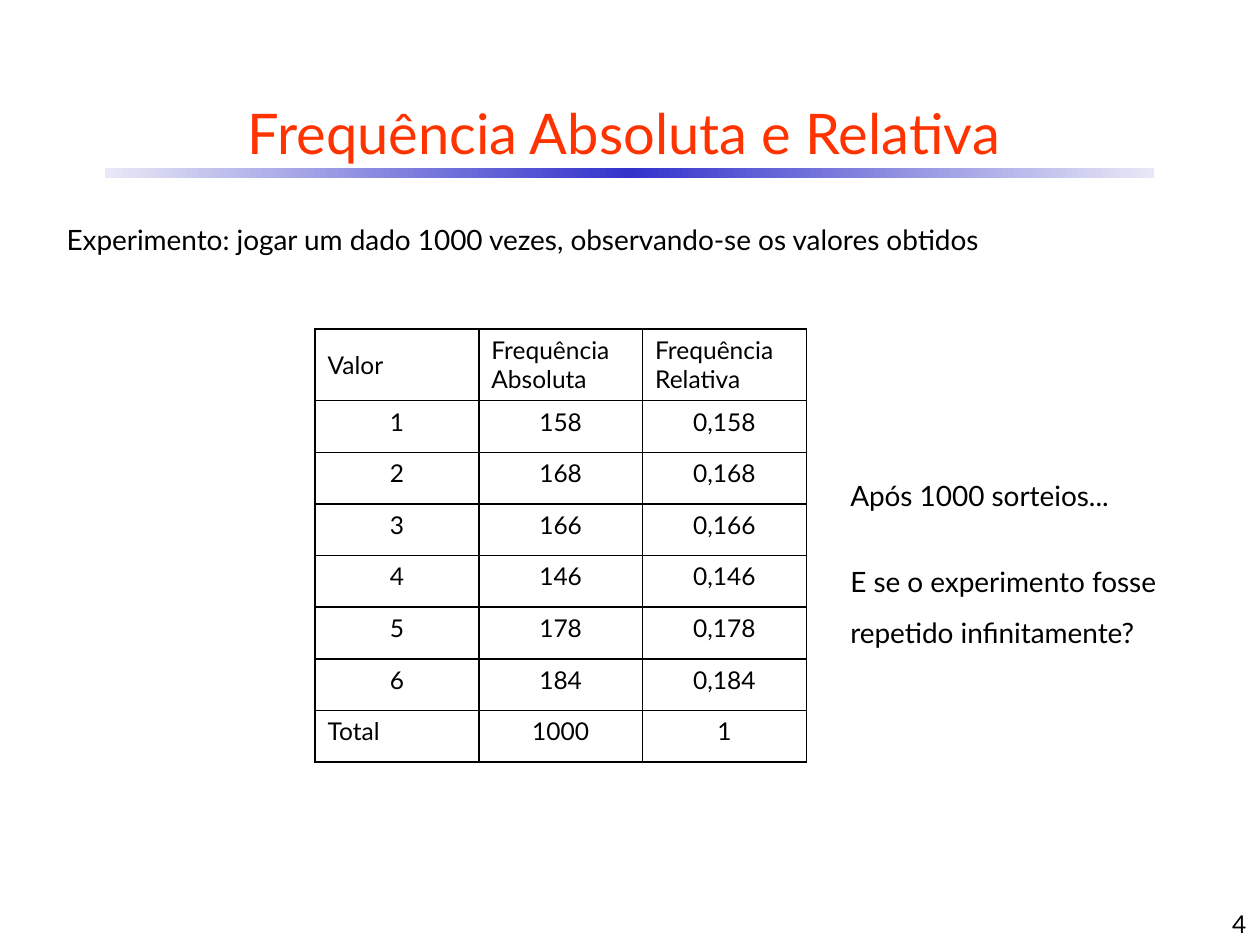
from copy import deepcopy
from pptx import Presentation
from pptx.util import Inches, Pt
from pptx.dml.color import RGBColor as RGB
from pptx.enum.shapes import MSO_SHAPE as Shape
from pptx.enum.text import MSO_ANCHOR as Anchor, MSO_AUTO_SIZE as Auto, PP_ALIGN as Align
from pptx.oxml import parse_xml
from pptx.oxml.ns import nsdecls

TITLE = "Frequência Absoluta e Relativa"
HEAD = ["Valor", "Frequência\nAbsoluta", "Frequência\nRelativa"]
COUNTS = [158, 168, 166, 146, 178, 184]
NOTES = [
    dict(text="Após 1000 sorteios...", box=(6.65, 3.75, 2.76, 0.37)),
    dict(text="Experimento: jogar um dado 1000 vezes, observando-se os valores obtidos",
         box=(0.43, 1.72, 9.14, 0.37)),
    dict(text="E se o experimento fosse repetido infinitamente?",
         box=(6.65, 4.3, 2.76, 0.85), gap=1.5),
    dict(text="4", box=(7.91, 7, 2.08, 0.5), size="small",
         align=Align.RIGHT, anchor=Anchor.BOTTOM, grow=False),
]
THEME = dict(font="Lato", ink="000000", red="FF3300", blue="3333CC", pale="E8E8F6",
             paper="FFFFFF", title=32, body=16, small=14, rule=1)


def write(frame, text, size, color="ink", align=None, gap=None):
    para = frame.paragraphs[0]
    para.alignment = align
    if gap:
        para.line_spacing = gap
    for i, line in enumerate(text.split("\n")):
        if i:
            para.add_line_break()
        run = para.add_run()
        run.text = line
        run.font.name = THEME["font"]
        run.font.size = Pt(THEME[size])
        run.font.color.rgb = RGB.from_string(THEME[color])


def add_bar(slide):
    bar = slide.shapes.add_shape(Shape.RECTANGLE, *map(Inches, (0.83, 1.33, 8.33, 0.08)))
    bar.shadow.inherit = False
    bar.line.fill.background()
    bar.fill.gradient()
    bar.fill.gradient_angle = 0
    first = bar.fill.gradient_stops[0]
    node = bar.fill._fill._gradFill.gsLst
    node.insert(1, deepcopy(node[0]))
    for stop, pos, name in zip(bar.fill.gradient_stops, (0, 0.5, 1), ("pale", "blue", "pale")):
        stop.position = pos
        stop.color.rgb = RGB.from_string(THEME[name])


def add_note(slide, text, box, size="body", align=Align.LEFT,
             anchor=Anchor.TOP, gap=None, grow=True):
    frame = slide.shapes.add_textbox(*map(Inches, box)).text_frame
    frame.word_wrap = True
    frame.auto_size = Auto.SHAPE_TO_FIT_TEXT if grow else Auto.NONE
    frame.vertical_anchor = anchor
    write(frame, text, size, align=align, gap=gap)


def rule(cell):
    props = cell._tc.get_or_add_tcPr()
    for i, side in enumerate("LRTB"):
        props.insert(i, parse_xml(
            f'<a:ln{side} {nsdecls("a")} w="{Pt(THEME["rule"])}"><a:solidFill>'
            f'<a:srgbClr val="{THEME["ink"]}"/></a:solidFill></a:ln{side}>'))


def add_grid(slide):
    total = sum(COUNTS)
    rows = [HEAD]
    rows += [[str(i), str(n), f"{n / total:.3f}".replace(".", ",")]
             for i, n in enumerate(COUNTS, 1)]
    rows.append(["Total", str(total), "1"])
    grid = slide.shapes.add_table(len(rows), len(HEAD),
                                  *map(Inches, (2.5, 2.61, 3.91, 3.41))).table
    grid.first_row = grid.horz_banding = False
    for col in grid.columns:
        col.width = Inches(1.3)
    for r, row in enumerate(rows):
        grid.rows[r].height = Inches(0.41 if r else 0.57)
        for c, text in enumerate(row):
            cell = grid.cell(r, c)
            cell.fill.solid()
            cell.fill.fore_color.rgb = RGB.from_string(THEME["paper"])
            cell.vertical_anchor = Anchor.TOP if r else Anchor.MIDDLE
            left = r == 0 or text == "Total"
            write(cell.text_frame, text, "small", align=Align.LEFT if left else Align.CENTER)
            rule(cell)


def main():
    deck = Presentation()
    deck.slide_width, deck.slide_height = Inches(10), Inches(7.5)
    slide = deck.slides.add_slide(deck.slide_layouts[5])
    add_bar(slide)
    add_grid(slide)
    title = slide.shapes.title
    title.left, title.top, title.width, title.height = map(Inches, (0.33, 0.67, 9.25, 0.75))
    title.text_frame.auto_size = Auto.NONE
    title.text_frame.vertical_anchor = Anchor.MIDDLE
    write(title.text_frame, TITLE, "title", "red", Align.CENTER)
    for note in NOTES:
        add_note(slide, **note)
    deck.save("out.pptx")


if __name__ == "__main__":
    main()
